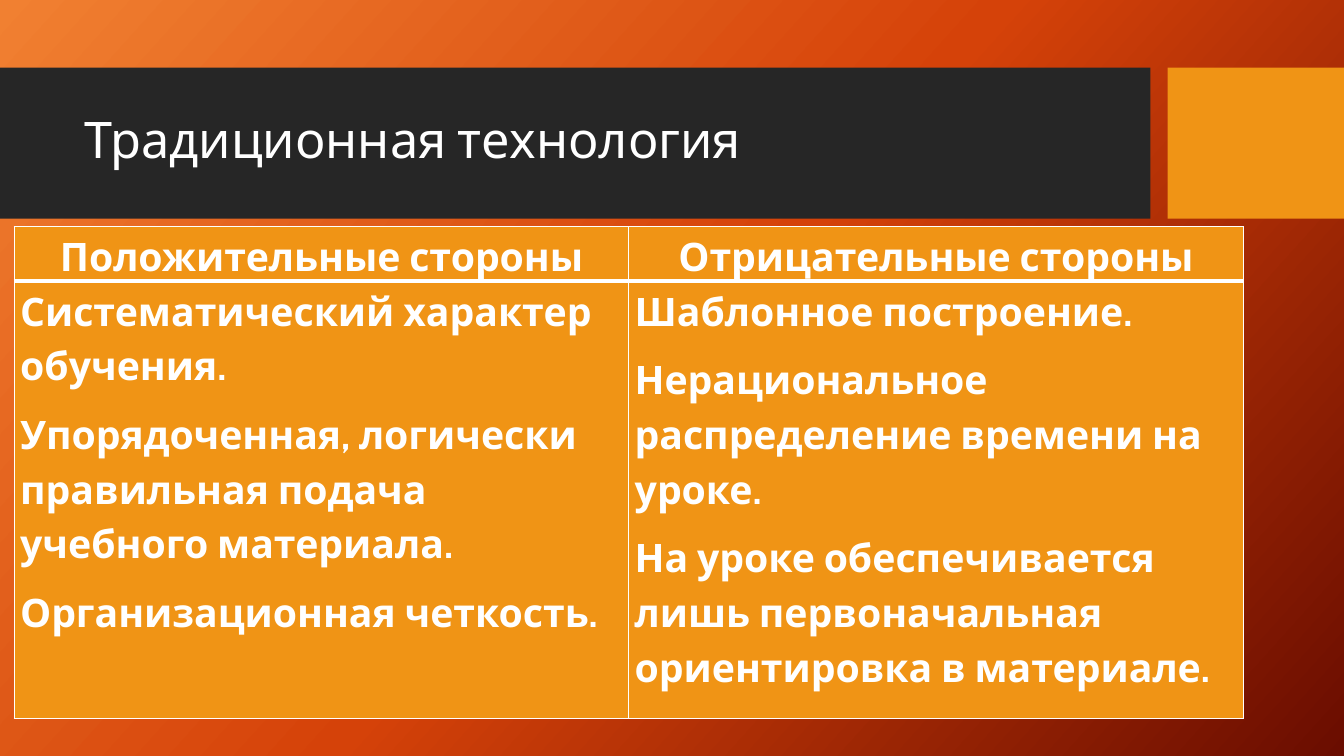
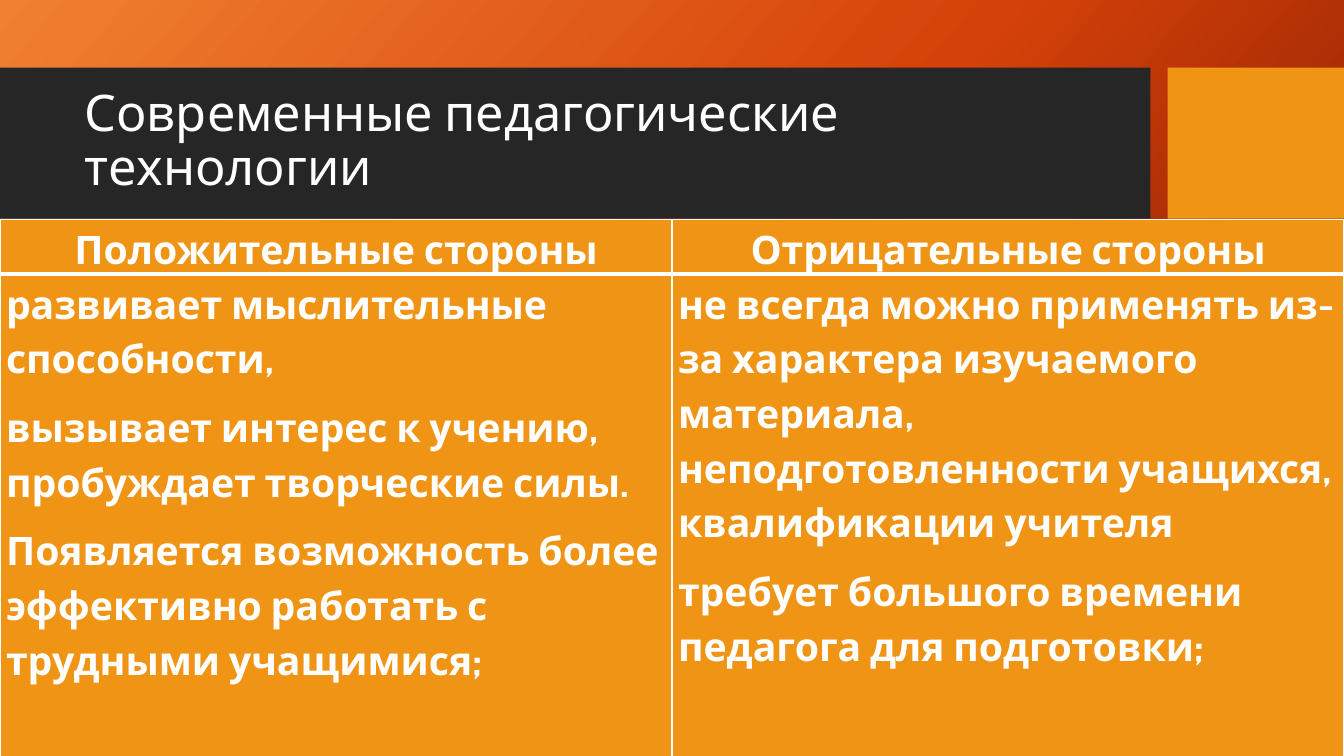
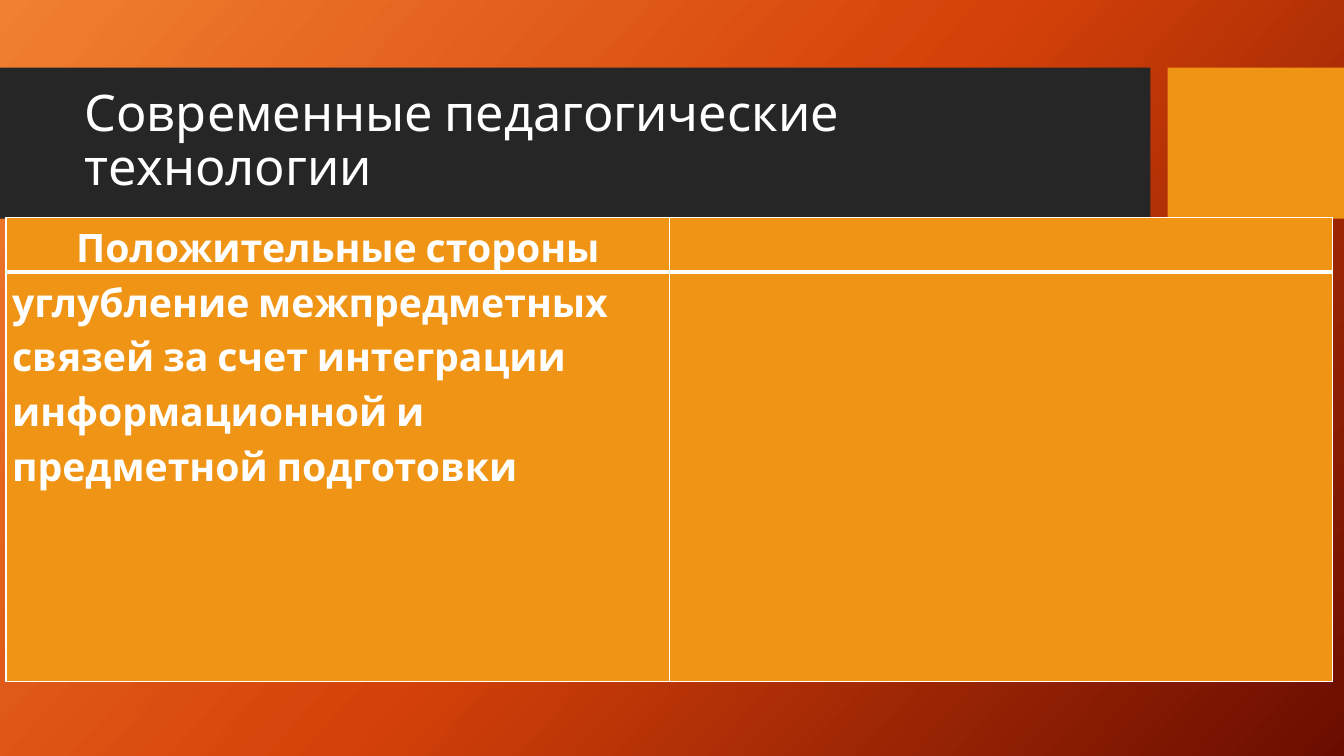
from copy import deepcopy

from lxml import etree
from pptx import Presentation
from pptx.dml.color import RGBColor
from pptx.enum.shapes import MSO_SHAPE
from pptx.enum.text import MSO_ANCHOR, PP_ALIGN
from pptx.oxml.ns import qn
from pptx.util import Inches, Pt

RECT = MSO_SHAPE.RECTANGLE
MIDDLE = MSO_ANCHOR.MIDDLE
LEFT, CENTER = PP_ALIGN.LEFT, PP_ALIGN.CENTER

FONT = "Cabin"
WHITE, DARK, AMBER = "FFFFFF", "262626", "F09415"
GLOW = ["F18031", "D54209", "6A0D00"]
WIDTH, HEIGHT = 13.33, 7.5
BAND_TOP, BAND_HIGH = 0.67, 1.5
HEAD_HIGH = 0.54
PLUS, MINUS = "Положительные стороны", "Отрицательные стороны"
MODERN = "Современные педагогические технологии"

# title, table box (left, top, width), body height, heads, body columns
SLIDES = [
    ("Традиционная технология", (0.14, 2.25, 12.19), 4.34, (PLUS, MINUS), (
        ["Систематический характер обучения.",
         "Упорядоченная, логически правильная подача учебного материала.",
         "Организационная четкость."],
        ["Шаблонное построение.",
         "Нерациональное распределение времени на уроке.",
         "На уроке обеспечивается лишь первоначальная ориентировка "
         "в материале."])),
    (MODERN, (0, 2.18, 13.33), 5.05, (PLUS, MINUS), (
        ["развивает мыслительные способности,",
         "вызывает интерес к учению, пробуждает творческие силы.",
         "Появляется возможность более эффективно работать "
         "с трудными учащимися;"],
        ["не всегда можно применять из-за характера изучаемого материала, "
         "неподготовленности учащихся, квалификации учителя",
         "требует большого времени педагога для подготовки;"])),
    (MODERN, (0.06, 2.16, 13.16), 4.06, (PLUS, None), (
        ["углубление межпредметных связей за счет интеграции "
         "информационной и предметной подготовки"],
        [])),
]


def paint(color, code):
    color.rgb = RGBColor.from_string(code)


def backdrop(master):
    """Give the master a three-stop diagonal gradient."""
    fill = master.background.fill
    fill.gradient()
    fill.gradient_angle = 360 - 42
    stops = master.element.find(".//" + qn("a:gsLst"))
    stops.insert(1, deepcopy(stops[0]))
    for stop, place, code in zip(fill.gradient_stops, (0, 0.5, 1), GLOW):
        stop.position = place
        paint(stop.color, code)


def write(frame, lines, size, bold, align, space, after):
    for i, line in enumerate(lines):
        para = frame.paragraphs[0] if i == 0 else frame.add_paragraph()
        para.text = line
        para.alignment = align
        para.line_spacing = space
        para.space_after = Pt(after)
        font = para.font
        font.name, font.size, font.bold = FONT, Pt(size), bold
        paint(font.color, WHITE)


def block(slide, left, width, code):
    shape = slide.shapes.add_shape(
        RECT, Inches(left), Inches(BAND_TOP), Inches(width),
        Inches(BAND_HIGH))
    shape.shadow.inherit = False
    shape.fill.solid()
    paint(shape.fill.fore_color, code)
    shape.line.fill.background()


def banner(slide, title):
    """Draw the dark title band and the amber block beside it."""
    block(slide, 0, 11.41, DARK)
    block(slide, 11.58, WIDTH - 11.58, AMBER)
    box = slide.shapes.add_textbox(
        Inches(0.74), Inches(BAND_TOP + 0.15), Inches(10.51), Inches(1.18))
    frame = box.text_frame
    frame.word_wrap = True
    frame.vertical_anchor = MIDDLE
    write(frame, [title], 36, False, LEFT, 0.9, 0)


def edge(cell, side, points):
    line = etree.SubElement(cell._tc.get_or_add_tcPr(), qn("a:ln" + side),
                            w=str(Pt(points)))
    fill = etree.SubElement(line, qn("a:solidFill"))
    etree.SubElement(fill, qn("a:srgbClr"), val=WHITE)


def fill_cell(cell, lines, head):
    cell.margin_left = cell.margin_right = Inches(0.06)
    cell.margin_top = cell.margin_bottom = 0
    for side in "LRTB":
        edge(cell, side, 3 if side == ("B" if head else "T") else 1)
    cell.fill.solid()
    paint(cell.fill.fore_color, AMBER)
    write(cell.text_frame, lines, 28, True, CENTER if head else LEFT,
          1.15, 10)


def compare(slide, box, high, heads, bodies):
    """Place the two-column table of pros and cons."""
    left, top, width = box
    table = slide.shapes.add_table(
        2, 2, Inches(left), Inches(top), Inches(width),
        Inches(HEAD_HIGH + high)).table
    table.first_row = table.horz_banding = False
    table.rows[0].height = Inches(HEAD_HIGH)
    table.rows[1].height = Inches(high)
    for col, (head, body) in enumerate(zip(heads, bodies)):
        table.columns[col].width = Inches(width / 2)
        fill_cell(table.cell(0, col), [head] if head else [], True)
        fill_cell(table.cell(1, col), body, False)


def main():
    prs = Presentation()
    prs.slide_width, prs.slide_height = Inches(WIDTH), Inches(HEIGHT)
    backdrop(prs.slide_master)
    for title, box, high, heads, bodies in SLIDES:
        slide = prs.slides.add_slide(prs.slide_layouts[6])
        banner(slide, title)
        compare(slide, box, high, heads, bodies)
    prs.save("out.pptx")


if __name__ == "__main__":
    main()
